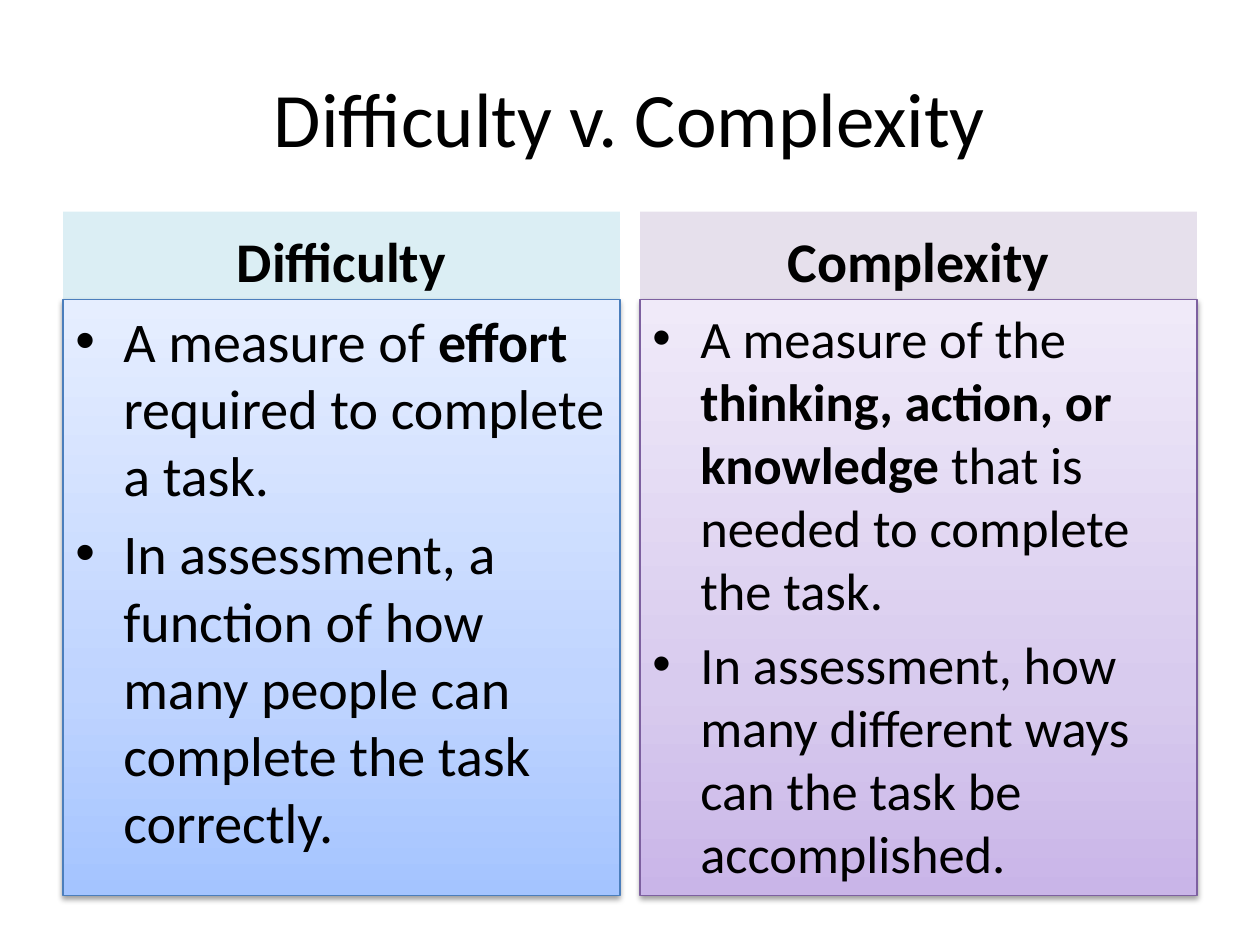
from dataclasses import dataclass

from pptx import Presentation
from pptx import util as u
from pptx.dml import color
from pptx.enum import shapes, text
from pptx.oxml import ns, parse_xml


@dataclass(frozen=True)
class Theme:
    font: str = "Calibri"
    ink: str = "000000"
    title: int = 44
    head: int = 32


@dataclass(frozen=True)
class Panel:
    left: float
    head: str
    tint: str
    edge: str
    stops: tuple[str, str, str]  # bottom to top
    size: int
    points: tuple[str, ...]  # *stars* mark bold words


THEME = Theme()
WIDTH, TOP, HEAD, BODY = 4.42, 1.68, 0.7, 4.73
PANELS = (
    Panel(0.5, "Difficulty", "DBEEF4", "4B7EBC",
          ("A4C4FF", "BFD4FF", "E6EEFF"), 32,
          ("A measure of *effort* required to complete a task.",
           "In assessment, a function of how many people can complete "
           "the task correctly.")),
    Panel(5.08, "Complexity", "E6E0EC", "7D60A0",
          ("C9B5E8", "D8CBEE", "F0EAF9"), 30,
          ("A measure of the *thinking, action, or knowledge *that is "
           "needed to complete the task.",
           "In assessment, how many different ways can the task be "
           "accomplished.")),
)


def style(run, size: int, bold: bool = False) -> None:
    font = run.font
    font.name, font.size, font.bold = THEME.font, u.Pt(size), bold
    font.color.rgb = color.RGBColor.from_string(THEME.ink)


def add_box(slide, left: float, top: float, high: float):
    box = slide.shapes.add_shape(
        shapes.MSO_SHAPE.RECTANGLE, u.Inches(left), u.Inches(top),
        u.Inches(WIDTH), u.Inches(high))
    box.shadow.inherit = False
    box.text_frame.word_wrap = True
    return box


def add_head(slide, panel: Panel) -> None:
    box = add_box(slide, panel.left, TOP, HEAD)
    box.fill.solid()
    box.fill.fore_color.rgb = color.RGBColor.from_string(panel.tint)
    box.line.fill.background()
    frame = box.text_frame
    frame.vertical_anchor = text.MSO_ANCHOR.BOTTOM
    frame.text = panel.head
    para = frame.paragraphs[0]
    para.alignment = text.PP_ALIGN.CENTER
    style(para.runs[0], THEME.head, True)


def shade(box, stops: tuple[str, str, str]) -> None:
    """Give the box a three-stop gradient and a soft drop shadow."""
    marks = "".join(
        f'<a:gs pos="{pos}"><a:srgbClr val="{tone}"/></a:gs>'
        for pos, tone in zip((0, 35000, 100000), stops))
    props = box._element.spPr
    props.find(ns.qn("a:prstGeom")).addnext(parse_xml(
        f'<a:gradFill {ns.nsdecls("a")} rotWithShape="1">'
        f'<a:gsLst>{marks}</a:gsLst>'
        '<a:lin ang="16200000" scaled="0"/></a:gradFill>'))
    props.find(ns.qn("a:effectLst")).append(parse_xml(
        f'<a:outerShdw {ns.nsdecls("a")} blurRad="{u.Pt(3.1)}" '
        f'dist="{u.Pt(1.6)}" dir="5400000" rotWithShape="0">'
        '<a:srgbClr val="000000"><a:alpha val="38000"/></a:srgbClr>'
        '</a:outerShdw>'))


def add_point(para, words: str, size: int) -> None:
    para.alignment = text.PP_ALIGN.LEFT
    para.space_before = u.Pt(size * 0.2)
    props = para._p.get_or_add_pPr()
    props.set("marL", str(u.Inches(0.38)))
    props.set("indent", str(u.Inches(-0.38)))
    for tag in ('buFont typeface="Arial"', 'buChar char="•"'):
        props.append(parse_xml(f'<a:{tag.replace(" ", " " + ns.nsdecls("a") + " ", 1)}/>'))
    for i, part in enumerate(words.split("*")):
        run = para.add_run()
        run.text = part
        style(run, size, i % 2 == 1)


def add_body(slide, panel: Panel) -> None:
    box = add_box(slide, panel.left, TOP + HEAD, BODY)
    box.line.color.rgb = color.RGBColor.from_string(panel.edge)
    box.line.width = u.Pt(0.75)
    shade(box, panel.stops)
    frame = box.text_frame
    frame.vertical_anchor = text.MSO_ANCHOR.TOP
    for i, words in enumerate(panel.points):
        para = frame.add_paragraph() if i else frame.paragraphs[0]
        add_point(para, words, panel.size)


def main() -> None:
    deck = Presentation()
    deck.slide_width, deck.slide_height = u.Inches(10), u.Inches(7.5)
    slide = deck.slides.add_slide(deck.slide_layouts[5])

    # Title
    title = slide.shapes.title
    title.left, title.top = u.Inches(0.5), u.Inches(0.3)
    title.width, title.height = u.Inches(9), u.Inches(1.25)
    frame = title.text_frame
    frame.text = "Difficulty v. Complexity"
    frame.vertical_anchor = text.MSO_ANCHOR.MIDDLE
    frame.paragraphs[0].alignment = text.PP_ALIGN.CENTER
    style(frame.paragraphs[0].runs[0], THEME.title)

    # Two panels side by side
    for panel in PANELS:
        add_head(slide, panel)
        add_body(slide, panel)

    deck.save("out.pptx")


if __name__ == "__main__":
    main()
